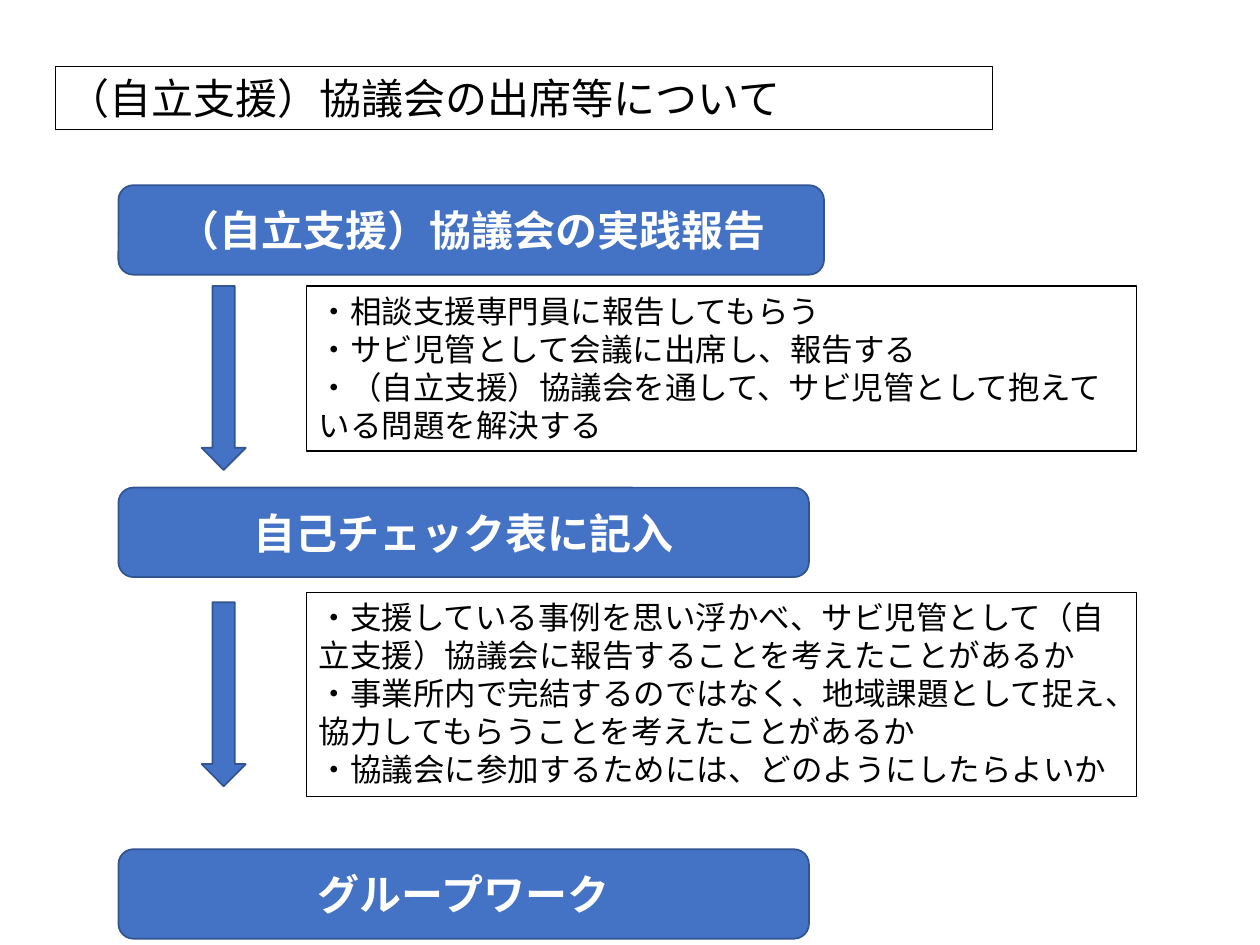
from pptx import Presentation
from pptx.dml.color import RGBColor
from pptx.enum.shapes import MSO_SHAPE
from pptx.enum.text import MSO_ANCHOR, MSO_AUTO_SIZE, PP_ALIGN
from pptx.util import Inches, Pt

ROUNDED, ARROW = MSO_SHAPE.ROUNDED_RECTANGLE, MSO_SHAPE.DOWN_ARROW
MIDDLE, TOP = MSO_ANCHOR.MIDDLE, MSO_ANCHOR.TOP
CENTER, LEFT = PP_ALIGN.CENTER, PP_ALIGN.LEFT
FIT_SHAPE = MSO_AUTO_SIZE.SHAPE_TO_FIT_TEXT

THEME = {
    "font": "Calibri",
    "heading": 24,
    "body": 18,
    "ink": RGBColor(0, 0, 0),
    "light": RGBColor(0xFF, 0xFF, 0xFF),
    "accent": RGBColor(0x44, 0x72, 0xC4),
    "edge": RGBColor(0x32, 0x54, 0x91),
}

TITLE = "（自立支援）協議会の出席等について"
STEPS = [
    {"label": "（自立支援）協議会の実践報告", "top": 1.47, "width": 5.6,
     "arrow_top": 2.27, "notes_top": 2.27, "notes_height": 1.31,
     "notes": ["・相談支援専門員に報告してもらう",
               "・サビ児管として会議に出席し、報告する",
               "・（自立支援）協議会を通して、サビ児管として抱えている問題を解決する"]},
    {"label": "自己チェック表に記入", "top": 3.87, "width": 5.48,
     "arrow_top": 4.78, "notes_top": 4.7, "notes_height": 1.62,
     "notes": ["・支援している事例を思い浮かべ、サビ児管として（自立支援）協議会に報告することを考えたことがあるか",
               "・事業所内で完結するのではなく、地域課題として捉え、協力してもらうことを考えたことがあるか",
               "・協議会に参加するためには、どのようにしたらよいか"]},
    {"label": "グループワーク", "top": 6.74, "width": 5.48, "notes": []},
]

STEP_LEFT, STEP_HEIGHT = 0.94, 0.71
ARROW_LEFT, ARROW_WIDTH, ARROW_HEIGHT = 1.6, 0.35, 1.46
NOTES_LEFT, NOTES_WIDTH = 2.43, 6.59


def write(box, lines, size, color, bold=False, align=LEFT, anchor=TOP):
    frame = box.text_frame
    frame.word_wrap = True
    frame.vertical_anchor = anchor
    for index, line in enumerate(lines):
        para = frame.add_paragraph() if index else frame.paragraphs[0]
        para.alignment = align
        span = para.add_run()
        span.text = line
        span.font.name = THEME["font"]
        span.font.size = Pt(size)
        span.font.bold = bold
        span.font.color.rgb = color


def add_framed_text(page, area, lines, size):
    box = page.shapes.add_textbox(*map(Inches, area))
    box.line.color.rgb = THEME["ink"]
    box.line.width = Pt(0.75)
    write(box, lines, size, THEME["ink"])
    box.text_frame.auto_size = FIT_SHAPE


def add_block(page, kind, area):
    block = page.shapes.add_shape(kind, *map(Inches, area))
    block.shadow.inherit = False
    block.fill.solid()
    block.fill.fore_color.rgb = THEME["accent"]
    block.line.color.rgb = THEME["edge"]
    block.line.width = Pt(1)
    return block


def add_step(page, step):
    label = add_block(page, ROUNDED, (STEP_LEFT, step["top"], step["width"], STEP_HEIGHT))
    write(label, [step["label"]], THEME["heading"], THEME["light"], True, CENTER, MIDDLE)
    if step["notes"]:
        add_block(page, ARROW, (ARROW_LEFT, step["arrow_top"], ARROW_WIDTH, ARROW_HEIGHT))
        area = (NOTES_LEFT, step["notes_top"], NOTES_WIDTH, step["notes_height"])
        add_framed_text(page, area, step["notes"], THEME["body"])


def main():
    deck = Presentation()
    deck.slide_width, deck.slide_height = Inches(10), Inches(7.5)
    page = deck.slides.add_slide(deck.slide_layouts[6])
    add_framed_text(page, (0.44, 0.53, 7.44, 0.5), [TITLE], THEME["heading"])
    for step in STEPS:
        add_step(page, step)
    deck.save("out.pptx")


if __name__ == "__main__":
    main()
